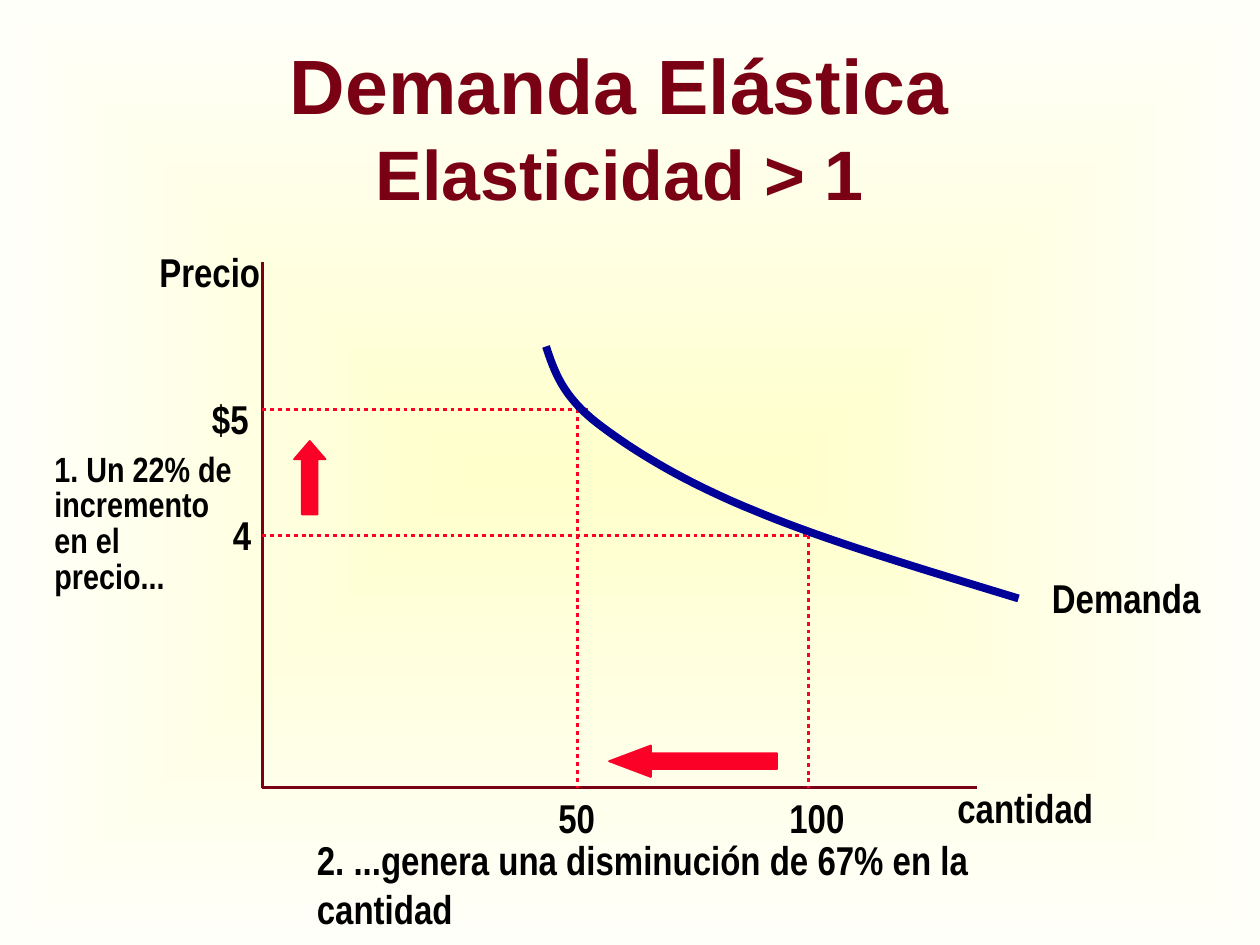
from pptx import Presentation
from pptx.dml.color import RGBColor
from pptx.enum.dml import MSO_LINE
from pptx.enum.shapes import MSO_CONNECTOR, MSO_SHAPE
from pptx.enum.text import MSO_ANCHOR, PP_ALIGN
from pptx.oxml import parse_xml
from pptx.oxml.ns import nsdecls
from pptx.oxml.xmlchemy import OxmlElement
from pptx.util import Inches, Pt

STRAIGHT = MSO_CONNECTOR.STRAIGHT
UP_ARROW, LEFT_ARROW = MSO_SHAPE.UP_ARROW, MSO_SHAPE.LEFT_ARROW
DOTTED = MSO_LINE.ROUND_DOT
MIDDLE, CENTER = MSO_ANCHOR.MIDDLE, PP_ALIGN.CENTER

MAROON = RGBColor(0x7A, 0x00, 0x14)
AXIS = RGBColor(0x79, 0x00, 0x15)
RED = RGBColor(0xFC, 0x01, 0x28)
NAVY = RGBColor(0x00, 0x00, 0x99)
BLACK = RGBColor(0x00, 0x00, 0x00)
CREAM, IVORY = "FFFFCC", "FFFFFA"

COLS, ROWS = 120, 90
WIDTH, HEIGHT = Inches(10), Inches(7.5)
CURVE_STEPS = 16


def grid(col, row):
    """Turn a column and row count into slide lengths."""
    return round(col * WIDTH / COLS), round(row * HEIGHT / ROWS)


def set_background(slide):
    """Fill the background with a gradient running out from the centre."""
    slide.element.cSld.insert(0, parse_xml(
        f'<p:bg {nsdecls("p", "a")}><p:bgPr><a:gradFill rotWithShape="0"><a:gsLst>'
        f'<a:gs pos="0"><a:srgbClr val="{CREAM}"/></a:gs>'
        f'<a:gs pos="100000"><a:srgbClr val="{IVORY}"/></a:gs></a:gsLst>'
        '<a:path path="shape"><a:fillToRect l="50000" t="50000" r="50000" b="50000"/></a:path>'
        '</a:gradFill><a:effectLst/></p:bgPr></p:bg>'))


def style_run(r, size, font, color):
    """Format one bold run."""
    r.font.size, r.font.name, r.font.bold = Pt(size), font, True
    r.font.color.rgb = color


def add_text(slide, box, text, size=23, wrap=False, spacing=None):
    """Place narrow black text in a box of columns and rows."""
    tf = slide.shapes.add_textbox(*grid(*box[:2]), *grid(*box[2:])).text_frame
    tf.word_wrap = wrap
    tf.text = text
    for p in tf.paragraphs:
        p.line_spacing = spacing
        for r in p.runs:
            style_run(r, size, "Arial Narrow", BLACK)


def add_line(slide, start, end, color, dash=None):
    """Draw a straight line between two grid points."""
    sp = slide.shapes.add_connector(STRAIGHT, *grid(*start), *grid(*end))
    sp.line.color.rgb, sp.line.width = color, Pt(2.25)
    if dash:
        sp.line.dash_style = dash
    sp._element.spPr.append(OxmlElement("a:effectLst"))


def add_arrow(slide, kind, box, head):
    """Place a red block arrow with the given head length."""
    sp = slide.shapes.add_shape(kind, *grid(*box[:2]), *grid(*box[2:]))
    sp.shadow.inherit = False
    sp.adjustments[0], sp.adjustments[1] = 0.5, head
    sp.fill.solid()
    sp.fill.fore_color.rgb = sp.line.color.rgb = RED
    sp.line.width = Pt(1)


def bezier(points, t):
    """Return the point at t on a cubic curve."""
    weights = ((1 - t) ** 3, 3 * t * (1 - t) ** 2, 3 * t ** 2 * (1 - t), t ** 3)
    return tuple(sum(w * pt[i] for w, pt in zip(weights, points)) for i in (0, 1))


def add_curve(slide, controls):
    """Draw a smooth line through joined cubic curves."""
    points = [grid(*bezier(controls[i:i + 4], step / CURVE_STEPS))
              for i in range(0, len(controls) - 1, 3)
              for step in range(1, CURVE_STEPS + 1)]
    fb = slide.shapes.build_freeform(*grid(*controls[0]))
    fb.add_line_segments(points, close=False)
    sp = fb.convert_to_shape()
    sp.shadow.inherit = False
    sp.fill.background()
    sp.line.color.rgb, sp.line.width = NAVY, Pt(4.5)


def add_title(slide, box):
    """Place the two-line heading."""
    tf = slide.shapes.add_textbox(*grid(*box[:2]), *grid(*box[2:])).text_frame
    tf.word_wrap, tf.vertical_anchor = True, MIDDLE
    tf.text = "Demanda Elástica\vElasticidad > 1"
    p = tf.paragraphs[0]
    p.alignment = CENTER
    for r, size in zip(p.runs, (44, 40)):
        style_run(r, size, "Arial", MAROON)


def add_graph(slide, box):
    """Draw the axes, guides, demand curve and labels."""
    left, top, width, height = box

    def at(x, y):
        return left + x, top + y

    add_line(slide, at(0, 0), at(0, height), AXIS)
    add_line(slide, at(0, height), at(width, height), AXIS)
    for price, quantity, end in ((14, 30, 31), (26, 52, 52)):
        add_line(slide, at(0, price), at(end, price), RED, DOTTED)
        add_line(slide, at(quantity, price), at(quantity, height), RED, DOTTED)
    add_curve(slide, [at(*pt) for pt in (
        (27, 8), (27.8, 10.4), (28.6, 12.8), (32, 15.4), (35.4, 18),
        (40.3, 21), (47, 23.7), (53.7, 26.5), (62.8, 29.2), (72, 32))])
    for text, x, y, label_width in (
            ("Precio", -11, -2, 12), ("$5", -6, 12, 5.9), ("4", -4, 23, 4.2),
            ("50", 27, height, 7.9), ("100", 49, height, 7.7),
            ("cantidad", 65, height - 1, 15.4), ("Demanda", 74, 29, 16.6)):
        add_text(slide, (*at(x, y), label_width, 5.8), text)


def add_price_note(slide, box):
    """Place the price note with its rising arrow."""
    left, top, width, height = box
    add_text(slide, box, "1. Un 22% de\nincremento\nen el precio...", 20, True, 0.85)
    add_arrow(slide, UP_ARROW, (left + 24, top - 0.6, 3, 7), 0.58)


def add_quantity_note(slide, box):
    """Place the quantity note with its falling arrow."""
    left, top, width, height = box
    add_text(slide, box, "2. ...genera una disminución de 67% en la cantidad", wrap=True)
    add_arrow(slide, LEFT_ARROW, (left + 29, top - 8, 16, 3), 1.33)


def main():
    """Build and save the slide."""
    prs = Presentation()
    prs.slide_width, prs.slide_height = WIDTH, HEIGHT
    slide = prs.slides.add_slide(prs.slide_layouts[6])
    set_background(slide)
    add_title(slide, (4, 3, 110, 18))
    add_graph(slide, (25, 25, 68, 50))
    add_price_note(slide, (4, 42.6, 19.8, 14.2))
    add_quantity_note(slide, (29, 79, 76.5, 10))
    prs.save("out.pptx")


if __name__ == "__main__":
    main()
